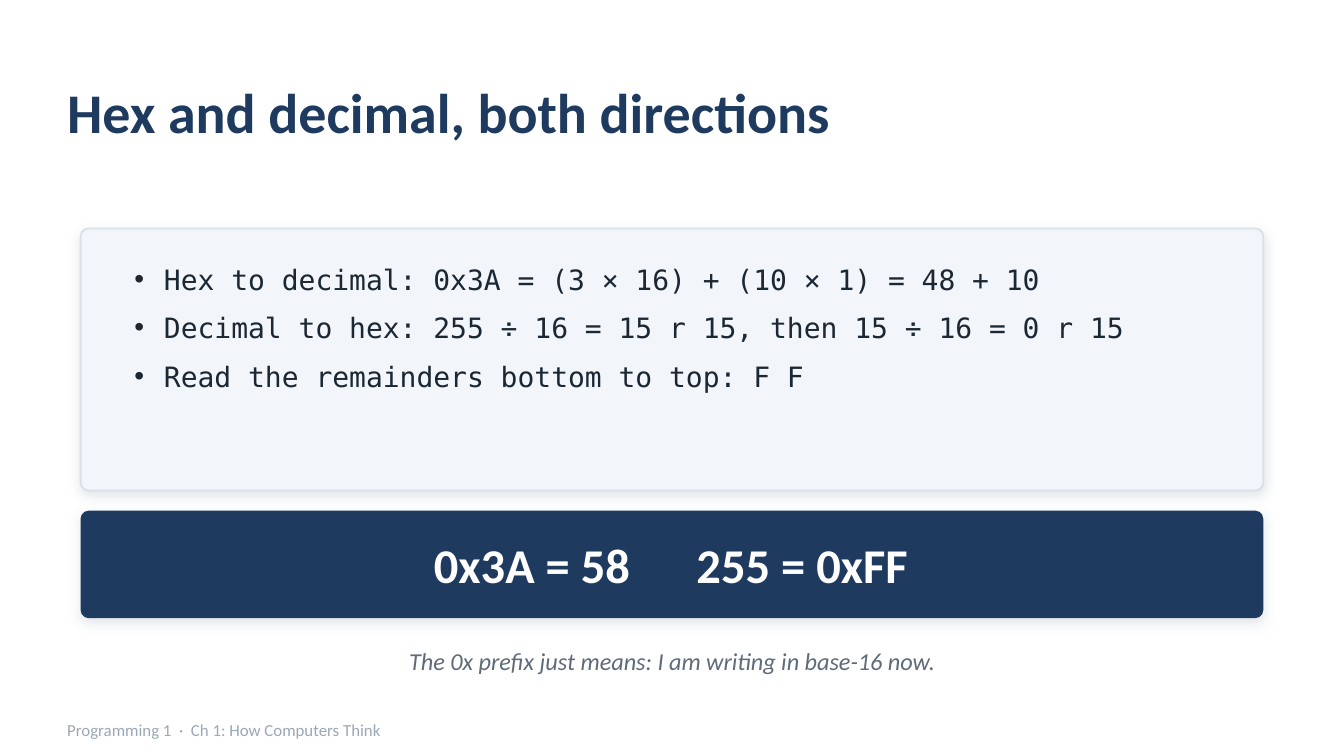
from lxml.etree import SubElement
from pptx import Presentation
from pptx.dml.color import RGBColor
from pptx.enum.shapes import MSO_SHAPE
from pptx.enum.text import MSO_ANCHOR, MSO_AUTO_SIZE, PP_ALIGN
from pptx.oxml import parse_xml
from pptx.oxml.ns import nsdecls, qn
from pptx.util import Inches, Pt

NAVY = RGBColor(0x1F, 0x3A, 0x5F)
INK = RGBColor(0x1B, 0x27, 0x33)
SLATE = RGBColor(0x5E, 0x6B, 0x79)
MIST = RGBColor(0x9A, 0xA8, 0xB6)
PANEL = RGBColor(0xF2, 0xF5, 0xF9)
BORDER = RGBColor(0xD8, 0xE0, 0xE9)
WHITE = RGBColor(0xFF, 0xFF, 0xFF)


def add_card(page, left, top, width, height, fill, corner):
    card = page.shapes.add_shape(
        MSO_SHAPE.ROUNDED_RECTANGLE, Inches(left), Inches(top), Inches(width), Inches(height)
    )
    card.adjustments[0] = corner / height
    card.fill.solid()
    card.fill.fore_color.rgb = fill
    card.line.fill.background()
    card.shadow.inherit = False
    effects = card.element.spPr.find(qn("a:effectLst"))
    effects.append(parse_xml(
        f'<a:outerShdw {nsdecls("a")} blurRad="{Pt(6)}" dist="{Pt(2)}" dir="5400000" '
        f'algn="ctr" rotWithShape="0"><a:srgbClr val="{MIST}">'
        '<a:alpha val="28000"/></a:srgbClr></a:outerShdw>'
    ))
    return card


def write_line(box, text, size, color, align=PP_ALIGN.LEFT, bold=False, italic=False):
    frame = box.text_frame
    frame.word_wrap = True
    frame.auto_size = MSO_AUTO_SIZE.NONE
    frame.vertical_anchor = MSO_ANCHOR.MIDDLE
    frame.margin_left = frame.margin_right = frame.margin_top = frame.margin_bottom = 0
    para = frame.paragraphs[0]
    para.alignment = align
    span = para.add_run()
    span.text = text
    span.font.name = "Calibri"
    span.font.size = Pt(size)
    span.font.bold = bold
    span.font.italic = italic
    span.font.color.rgb = color
    return para


deck = Presentation()
deck.slide_width = Inches(10)
deck.slide_height = Inches(10) * 9 // 16
page = deck.slides.add_slide(deck.slide_layouts[1])
page.background.fill.solid()
page.background.fill.fore_color.rgb = WHITE

title = page.shapes.title
title.left, title.top = Inches(0.5), Inches(0.4)
title.width, title.height = Inches(9), Inches(0.85)
write_line(title, "Hex and decimal, both directions", 30, NAVY, bold=True)

panel = add_card(page, 0.6, 1.7, 8.8, 1.95, PANEL, 0.06)
panel.line.color.rgb = BORDER
panel.line.width = Pt(1)

body = page.placeholders[1]
body.left, body.top = Inches(0.9), Inches(1.9)
body.width, body.height = Inches(8.2), Inches(1.6)
panel.element.addnext(body.element)
frame = body.text_frame
frame.word_wrap = True
frame.auto_size = MSO_AUTO_SIZE.NONE
steps = [
    "Hex to decimal: 0x3A = (3 × 16) + (10 × 1) = 48 + 10",
    "Decimal to hex: 255 ÷ 16 = 15 r 15, then 15 ÷ 16 = 0 r 15",
    "Read the remainders bottom to top: F F",
]
for index, step in enumerate(steps):
    para = frame.add_paragraph() if index else frame.paragraphs[0]
    para.space_before = Pt(0)
    para.space_after = Pt(8)
    properties = para._p.get_or_add_pPr()
    properties.set("marL", str(Inches(0.22)))
    properties.set("indent", str(-Inches(0.22)))
    SubElement(properties, qn("a:buChar")).set("char", "•")
    span = para.add_run()
    span.text = step
    span.font.name = "DejaVu Sans Mono"
    span.font.size = Pt(15)
    span.font.color.rgb = INK

add_card(page, 0.6, 3.8, 8.8, 0.8, NAVY, 0.06)
answer = page.shapes.add_textbox(Inches(0.6), Inches(3.83), Inches(8.8), Inches(0.74))
para = write_line(answer, "\t0x3A = 58\t255 = 0xFF", 26, WHITE, bold=True)
stops = SubElement(para._p.get_or_add_pPr(), qn("a:tabLst"))
for center in (3.36, 5.37):
    stop = SubElement(stops, qn("a:tab"))
    stop.set("pos", str(Inches(center)))
    stop.set("algn", "ctr")

remark = page.shapes.add_textbox(Inches(0.6), Inches(4.72), Inches(8.8), Inches(0.4))
write_line(remark, "The 0x prefix just means: I am writing in base-16 now.", 13, SLATE,
           align=PP_ALIGN.CENTER, italic=True)

footer = page.shapes.add_textbox(Inches(0.5), Inches(5.3), Inches(8), Inches(0.26))
write_line(footer, "Programming 1  ·  Ch 1: How Computers Think", 9, MIST)

deck.save("out.pptx")
